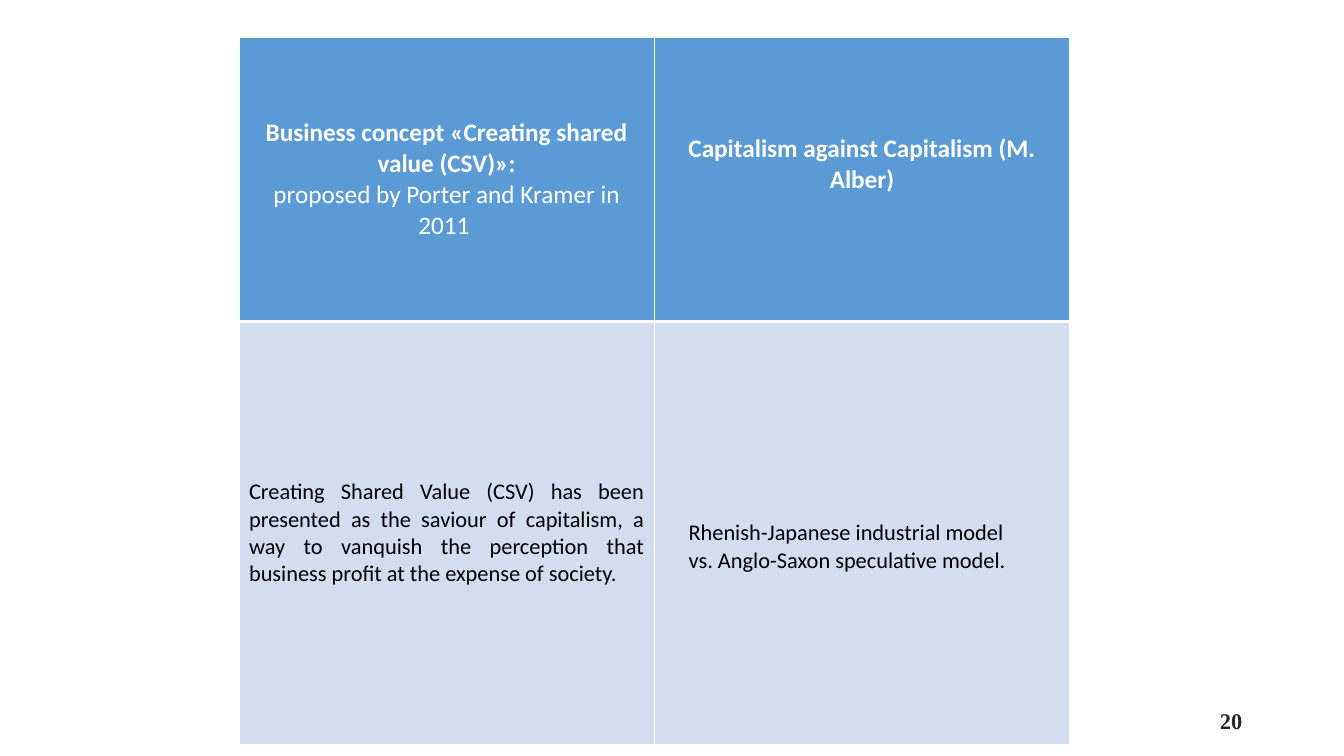
from dataclasses import dataclass

from lxml import etree
from pptx import Presentation
from pptx.dml.color import RGBColor
from pptx.enum.text import MSO_ANCHOR, PP_ALIGN
from pptx.oxml.ns import qn
from pptx.table import _Cell
from pptx.text.text import TextFrame
from pptx.util import Inches, Pt

CENTER, JUSTIFY, RIGHT = PP_ALIGN.CENTER, PP_ALIGN.JUSTIFY, PP_ALIGN.RIGHT
MIDDLE = MSO_ANCHOR.MIDDLE

WHITE = RGBColor(0xFF, 0xFF, 0xFF)
BLACK = RGBColor(0x00, 0x00, 0x00)
DARK_GREY = RGBColor(0x26, 0x26, 0x26)
HEADER_BLUE = RGBColor(0x5B, 0x9B, 0xD5)
BODY_BLUE = RGBColor(0xD2, 0xDE, 0xEF)

COLUMN_WIDTH = 4.12
ROW_HEIGHTS = (2.82, 4.2)
THIN, THICK = 1, 3


@dataclass(frozen=True)
class Line:
    text: str
    bold: bool = False


@dataclass(frozen=True)
class Concept:
    lines: tuple[Line, ...]
    left: float = 0.1
    top: float = 0.05
    bottom: float = 0.05


@dataclass(frozen=True)
class RowStyle:
    fill: RGBColor
    color: RGBColor
    size: int
    align: PP_ALIGN
    top_border: int
    bottom_border: int


HEADER = RowStyle(HEADER_BLUE, WHITE, 18, CENTER, THIN, THICK)
BODY = RowStyle(BODY_BLUE, BLACK, 16, JUSTIFY, THICK, THIN)

ROWS = (
    (HEADER, (
        Concept((
            Line("Business concept «Creating shared value (CSV)»:", bold=True),
            Line("proposed by Porter and Kramer in 2011 "),
        )),
        Concept((Line("Capitalism against Capitalism (M. Alber)", bold=True),),
                bottom=0.35),
    )),
    (BODY, (
        Concept((Line(
            "Creating Shared Value (CSV) has been presented as the saviour of "
            "capitalism, a way to vanquish the perception that business profit "
            "at the expense of society."),)),
        Concept((
            Line("Rhenish-Japanese industrial model"),
            Line("vs. Anglo-Saxon speculative model."),
        ), left=0.34, top=0.32),
    )),
)


def write_line(frame: TextFrame, text: str, *, first: bool, size: int,
               color: RGBColor, align: PP_ALIGN, bold: bool = False,
               font: str = "Calibri") -> None:
    paragraph = frame.paragraphs[0] if first else frame.add_paragraph()
    paragraph.alignment = align
    run = paragraph.add_run()
    run.text = text
    run.font.name = font
    run.font.size = Pt(size)
    run.font.bold = bold
    run.font.color.rgb = color


def add_borders(cell: _Cell, style: RowStyle) -> None:
    properties = cell._tc.get_or_add_tcPr()
    widths = {"lnL": THIN, "lnR": THIN,
              "lnT": style.top_border, "lnB": style.bottom_border}
    for side, width in widths.items():
        border = etree.SubElement(properties, qn(f"a:{side}"), w=str(Pt(width)))
        fill = etree.SubElement(border, qn("a:solidFill"))
        etree.SubElement(fill, qn("a:srgbClr"), val=str(WHITE))


def fill_cell(cell: _Cell, concept: Concept, style: RowStyle) -> None:
    add_borders(cell, style)
    cell.fill.solid()
    cell.fill.fore_color.rgb = style.fill
    cell.vertical_anchor = MIDDLE
    cell.margin_left = Inches(concept.left)
    cell.margin_top = Inches(concept.top)
    cell.margin_bottom = Inches(concept.bottom)
    for index, line in enumerate(concept.lines):
        write_line(cell.text_frame, line.text, first=index == 0, bold=line.bold,
                   size=style.size, color=style.color, align=style.align)


def main() -> None:
    deck = Presentation()
    deck.slide_width, deck.slide_height = Inches(13.33), Inches(7.5)
    slide = deck.slides.add_slide(deck.slide_layouts[6])

    comparison = slide.shapes.add_table(
        2, 2, Inches(2.37), Inches(0.37),
        Inches(2 * COLUMN_WIDTH), Inches(sum(ROW_HEIGHTS))).table
    for column in comparison.columns:
        column.width = Inches(COLUMN_WIDTH)
    for row, height, (style, concepts) in zip(comparison.rows, ROW_HEIGHTS, ROWS):
        row.height = Inches(height)
        for cell, concept in zip(row.cells, concepts):
            fill_cell(cell, concept, style)

    page_number = slide.shapes.add_textbox(
        Inches(9.42), Inches(6.95), Inches(3), Inches(0.4)).text_frame
    page_number.word_wrap = True
    page_number.vertical_anchor = MIDDLE
    write_line(page_number, "20", first=True, size=16, color=DARK_GREY,
               align=RIGHT, bold=True, font="Times New Roman")

    deck.save("out.pptx")


if __name__ == "__main__":
    main()
